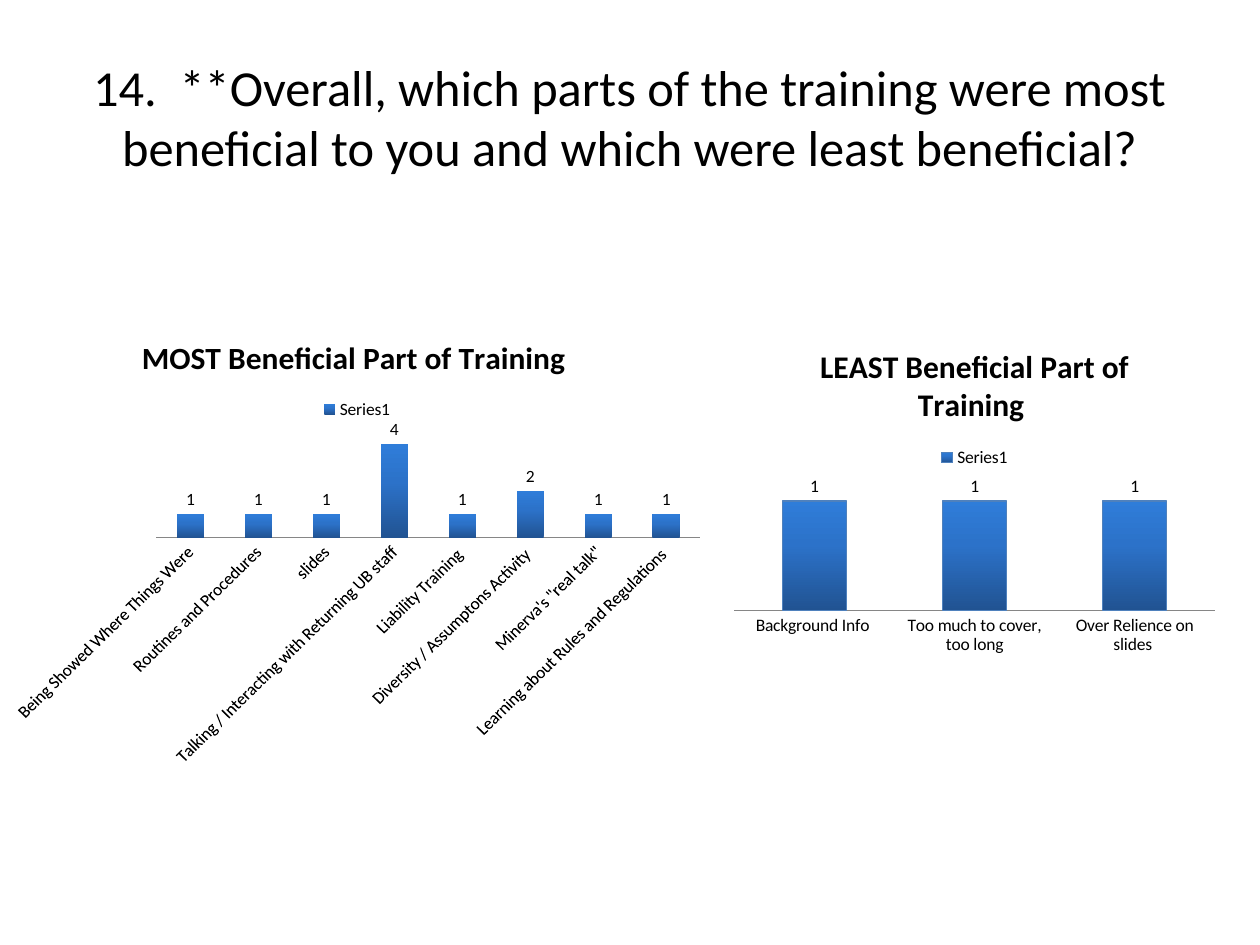
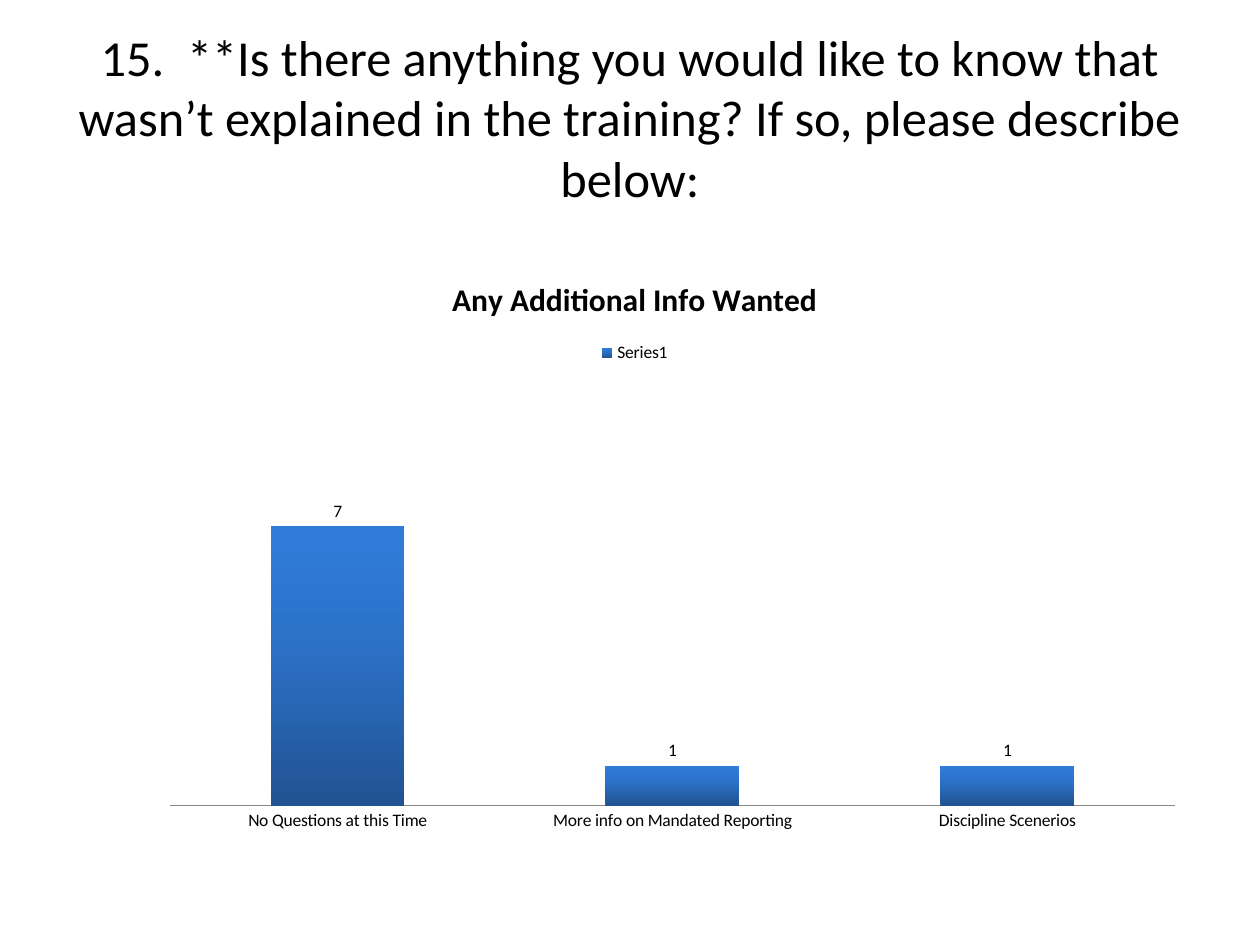
"""Build two survey slides with bar charts."""
from lxml.etree import SubElement
from pptx import Presentation
from pptx.chart.data import CategoryChartData
from pptx.dml.color import RGBColor
from pptx.enum.chart import XL_CHART_TYPE, XL_LABEL_POSITION, XL_LEGEND_POSITION, XL_TICK_MARK
from pptx.enum.text import MSO_ANCHOR, PP_ALIGN
from pptx.oxml.ns import qn
from pptx.util import Inches, Pt

FONT = "Calibri"
COLORS = {"text": "000000", "axis": "868686", "edge": "4F81BD",
          "low": "215392", "mid": "2C72C9", "high": "2F7DD9"}
HEAD = (0.5, 0.3, 9, 1.25)


def color(key):
    """Return the named colour."""
    return RGBColor.from_string(COLORS[key])


def style(font, size, bold=False):
    """Apply the shared font."""
    font.name, font.size, font.bold = FONT, Pt(size), bold
    font.color.rgb = color("text")


def add_title(slide, text, box=HEAD):
    """Write the centred question at the top of a slide."""
    frame = slide.shapes.add_textbox(*map(Inches, box)).text_frame
    frame.word_wrap = True
    frame.vertical_anchor = MSO_ANCHOR.MIDDLE
    frame.text = text
    line = frame.paragraphs[0]
    line.alignment = PP_ALIGN.CENTER
    style(line.runs[0].font, 28.8)


def shade(series):
    """Fill the bars with a gradient that lightens upwards."""
    fill = series.format.fill
    fill.gradient()
    fill.gradient_angle = 90
    for stop, key in zip(fill.gradient_stops, ("low", "high")):
        stop.color.rgb = color(key)
    stops = series._element.find(".//" + qn("a:gsLst"))
    mid = SubElement(stops, qn("a:gs"), pos="60000")
    SubElement(mid, qn("a:srgbClr"), val=COLORS["mid"])
    stops.insert(1, mid)


def set_plot(chart, area):
    """Fix the inner plot area as fractions of the chart."""
    plot = chart._chartSpace.find(".//" + qn("c:plotArea"))
    for old in plot.findall(qn("c:layout")):
        plot.remove(old)
    layout = SubElement(plot, qn("c:layout"))
    plot.insert(0, layout)
    manual = SubElement(layout, qn("c:manualLayout"))
    parts = [("layoutTarget", "inner"), ("xMode", "edge"), ("yMode", "edge")]
    for tag, value in parts + list(zip("xywh", area)):
        SubElement(manual, qn("c:" + tag), val=str(value))


def add_bars(slide, box, title, votes, area=None, edge=False):
    """Draw one titled column chart of votes in the given box."""
    data = CategoryChartData()
    data.categories = list(votes)
    data.add_series("Series1", list(votes.values()))
    chart = slide.shapes.add_chart(
        XL_CHART_TYPE.COLUMN_CLUSTERED, *map(Inches, box), data).chart
    style(chart.font, 10)
    chart.has_title = True
    frame = chart.chart_title.text_frame
    frame.text = title
    style(frame.paragraphs[0].runs[0].font, 18, True)
    chart.chart_title.include_in_layout = False
    chart.has_legend = True
    chart.legend.position = XL_LEGEND_POSITION.TOP
    chart.legend.include_in_layout = False

    chart.value_axis.visible = False
    chart.value_axis.has_major_gridlines = False
    chart.value_axis.minimum_scale = 0
    axis = chart.category_axis
    axis.major_tick_mark = axis.minor_tick_mark = XL_TICK_MARK.NONE
    axis.format.line.color.rgb = color("axis")
    axis.format.line.width = Pt(0.75)

    plot = chart.plots[0]
    plot.gap_width, plot.overlap = 150, -25
    plot.vary_by_categories = False
    plot.has_data_labels = True
    plot.data_labels.show_value = True
    plot.data_labels.position = XL_LABEL_POSITION.OUTSIDE_END
    bars = plot.series[0]
    shade(bars)
    if edge:
        bars.format.line.color.rgb = color("edge")
        bars.format.line.width = Pt(0.75)
    if area:
        set_plot(chart, area)


def add_parts(slide):
    """Compare the most and least beneficial parts."""
    add_title(slide, "14.  **Overall, which parts of the training were most "
                     "beneficial to you and which were least beneficial?")
    most = {"Being Showed Where Things Were": 1,
            "Routines and Procedures": 1,
            "slides": 1,
            "Talking / Interacting with Returning UB staff": 4,
            "Liability Training ": 1,
            "Diversity / Assumptons Activity ": 2,
            "Minerva's \"real talk\"": 1,
            "Learning about Rules and Regulations ": 1}
    least = {"Background Info ": 1,
             "Too much to cover, too long": 1,
             "Over Relience on slides ": 1}
    add_bars(slide, (0, 2.5, 5.67, 3.58), "MOST Beneficial Part of Training ", most)
    add_bars(slide, (5.75, 2.58, 3.97, 2.67), "LEAST Beneficial Part of Training ",
             least, edge=True)


def add_wants(slide):
    """Show what else people wanted to know."""
    add_title(slide, "15.  **Is there anything you would like to know that wasn’t "
                     "explained in the training? If so, please describe below:")
    wants = {"No Questions at this Time": 7,
             "More info on Mandated Reporting": 1,
             "Discipline Scenerios": 1}
    add_bars(slide, (0.75, 2, 8.58, 5.17), "Any Additional Info Wanted", wants,
             area=(0.07, 0.36, 0.93, 0.49))


def main():
    """Build and save the deck."""
    deck = Presentation()
    deck.slide_width, deck.slide_height = Inches(10), Inches(7.5)
    for build in (add_parts, add_wants):
        build(deck.slides.add_slide(deck.slide_layouts[6]))
    deck.save("out.pptx")


if __name__ == "__main__":
    main()
